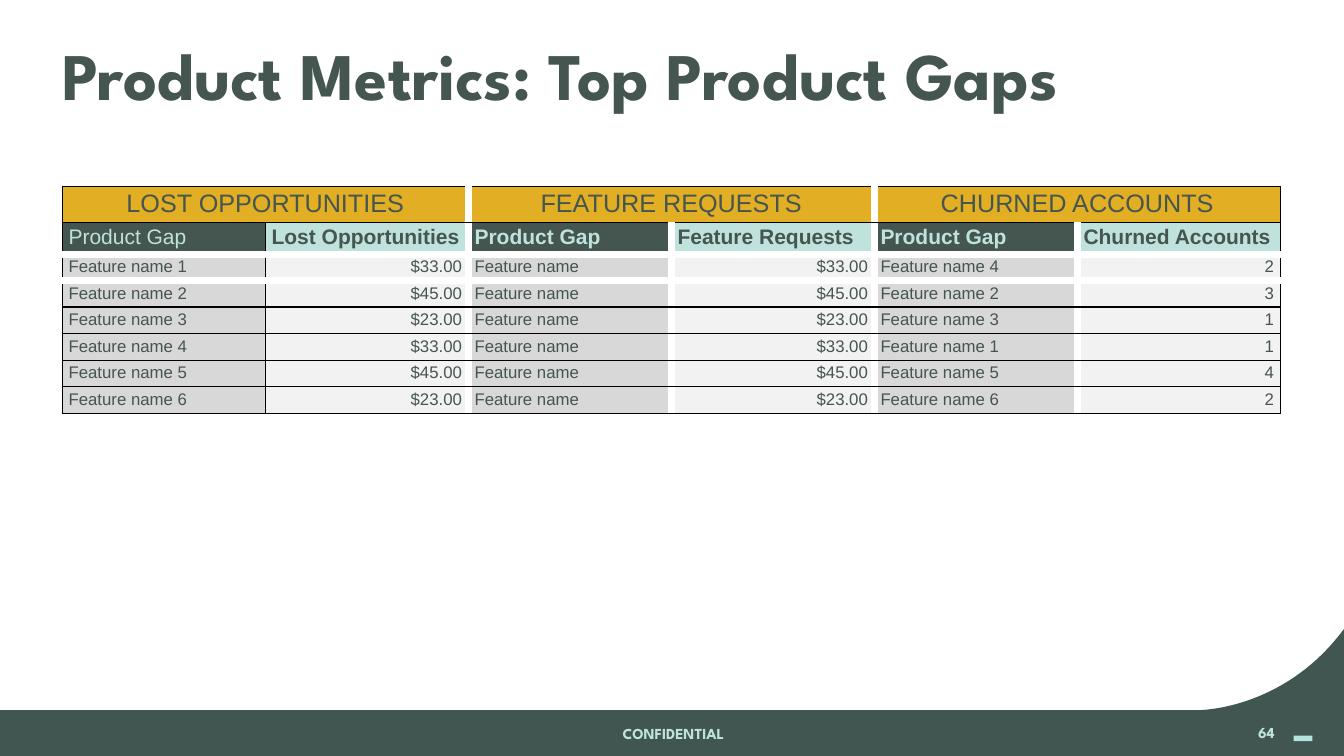
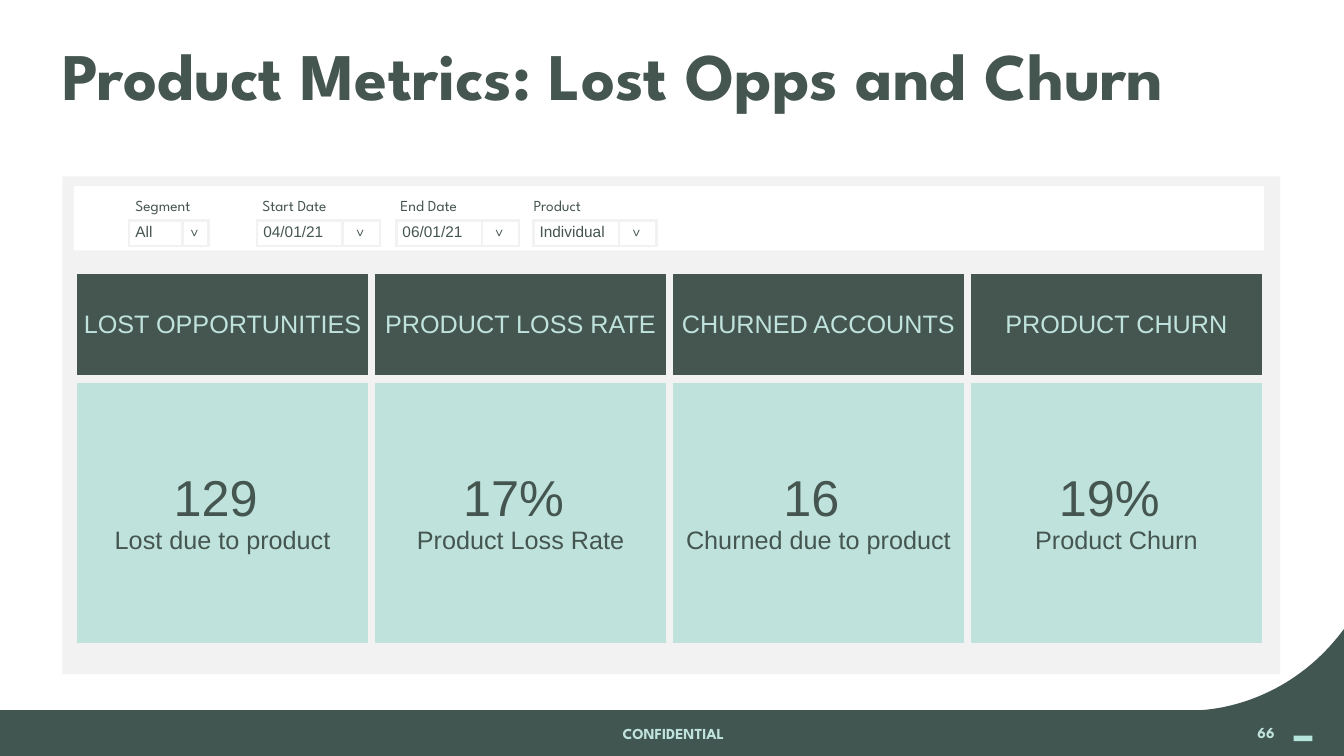
"""Builds two product metrics slides: top product gaps, and lost opportunities with churn."""
from lxml import etree
from pptx import Presentation
from pptx.dml.color import RGBColor
from pptx.enum.shapes import MSO_SHAPE as SHAPE
from pptx.enum.text import MSO_ANCHOR as ANCHOR, PP_ALIGN as ALIGN
from pptx.oxml.ns import qn
from pptx.util import Pt

HEADING_FONT, BODY_FONT = "League Spartan", "Arial"
DARK, MINT, GOLD = "455550", "BFE3DC", "E1AE24"
BAND, MARK = "415651", "B5E5DC"
GREY, PALE, WHITE, BLACK = "D8D8D8", "F2F2F2", "FFFFFF", "000000"
WIDTH, HEIGHT = 960, 540
LEFT, CONTENT_WIDTH = 44.5, 870

GAPS_TITLE, GAPS_PAGE = "Product Metrics: Top Product Gaps", "64"
GAP_GROUPS = [
    ("LOST OPPORTUNITIES", "Lost Opportunities", [
        ("Feature name 1", "$33.00"), ("Feature name 2", "$45.00"),
        ("Feature name 3", "$23.00"), ("Feature name 4", "$33.00"),
        ("Feature name 5", "$45.00"), ("Feature name 6", "$23.00")]),
    ("FEATURE REQUESTS", "Feature Requests", [
        ("Feature name", "$33.00"), ("Feature name", "$45.00"),
        ("Feature name", "$23.00"), ("Feature name", "$33.00"),
        ("Feature name", "$45.00"), ("Feature name", "$23.00")]),
    ("CHURNED ACCOUNTS", "Churned Accounts", [
        ("Feature name 4", "2"), ("Feature name 2", "3"), ("Feature name 3", "1"),
        ("Feature name 1", "1"), ("Feature name 5", "4"), ("Feature name 6", "2")]),
]
GAP_HEADING = "Product Gap"
GAP_ROWS = [26, 22] + [18.9] * 6
THIN, MEDIUM, WIDE = (BLACK, 0.75), (BLACK, 1.5), (WHITE, 6)
ROW_LINES = [THIN, THIN, WIDE, WIDE, MEDIUM, THIN, THIN, THIN, THIN]
COLUMN_LINES = [THIN, THIN, WIDE, WIDE, WIDE, WIDE, THIN]

CHURN_TITLE, CHURN_PAGE = "Product Metrics: Lost Opps and Churn", "66"
METRICS = [
    ("LOST OPPORTUNITIES", "129 ", "Lost due to product"),
    ("PRODUCT LOSS RATE", "17% ", "Product Loss Rate"),
    ("CHURNED ACCOUNTS", "16 ", "Churned due to product"),
    ("PRODUCT CHURN", "19% ", "Product Churn"),
]
FILTERS = [
    ("Segment", 92.2, 57, "All", 92.2, (38.2, 18.7)),
    ("Start Date", 182.9, 63, "04/01/21", 183.6, (61.2, 26.6)),
    ("End Date", 281.5, 59, "06/01/21", 283, (61.2, 26.6)),
    ("Product", 376.6, 51, "Individual", 380.9, (61.2, 26.6)),
]


def rgb(color):
    return RGBColor.from_string(color)


def paint(shape, color):
    shape.shadow.inherit = False
    shape.fill.solid()
    shape.fill.fore_color.rgb = rgb(color)
    shape.line.fill.background()


def add_block(slide, box, color):
    paint(slide.shapes.add_shape(SHAPE.RECTANGLE, *map(Pt, box)), color)


def style(paragraph, size, color, font=BODY_FONT, bold=False, align=ALIGN.LEFT):
    paragraph.alignment = align
    for run in paragraph.runs:
        run.font.size, run.font.name, run.font.bold = Pt(size), font, bold
        run.font.color.rgb = rgb(color)


def set_margins(holder, left=4.5):
    holder.margin_left, holder.margin_right = Pt(left), Pt(4.5)
    holder.margin_top = holder.margin_bottom = Pt(2.25)


def add_label(slide, box, text, size=10.9, color=DARK, bold=False,
              align=ALIGN.LEFT, anchor=ANCHOR.TOP, left_margin=4.5):
    label = slide.shapes.add_textbox(*map(Pt, box))
    frame = label.text_frame
    frame.word_wrap, frame.vertical_anchor = True, anchor
    set_margins(frame, left_margin)
    frame.text = text
    style(frame.paragraphs[0], size, color, HEADING_FONT, bold, align)
    return label


def add_grid(slide, left, top, columns, rows):
    frame = slide.shapes.add_table(len(rows), len(columns), Pt(left), Pt(top),
                                   Pt(sum(columns)), Pt(sum(rows)))
    grid = frame.table
    grid.first_row = grid.horz_banding = False
    for column, width in zip(grid.columns, columns):
        column.width = Pt(width)
    for row, height in zip(grid.rows, rows):
        row.height = Pt(height)
    return grid


def set_cell(cell, fill, lines, text="", anchor=ANCHOR.TOP):
    """Fill one cell; lines are (colour, width) for left, right, top and bottom."""
    properties = cell._tc.get_or_add_tcPr()
    for side, (color, width) in zip("LRTB", lines):
        edge = etree.SubElement(properties, qn(f"a:ln{side}"), w=str(Pt(width)))
        solid = etree.SubElement(edge, qn("a:solidFill"))
        etree.SubElement(solid, qn("a:srgbClr"), val=color)
    cell.fill.solid()
    cell.fill.fore_color.rgb = rgb(fill)
    set_margins(cell)
    cell.vertical_anchor = anchor
    cell.text = text
    return cell.text_frame.paragraphs


def add_band(slide):
    start, bend, end = (855.4, 507.3), (916.6, 508), (WIDTH, 449.3)
    curve = []
    for step in range(1, 41):
        t = step / 40
        weights = (1 - t) ** 3 + 3 * t * (1 - t) ** 2, 3 * t * t * (1 - t), t ** 3
        curve.append(tuple(sum(w * p for w, p in zip(weights, axis))
                           for axis in zip(start, bend, end)))
    outline = [(0, HEIGHT), (0, start[1]), start, *curve]
    builder = slide.shapes.build_freeform(Pt(WIDTH), Pt(HEIGHT))
    builder.add_line_segments([(Pt(x), Pt(y)) for x, y in outline], close=True)
    paint(builder.convert_to_shape(), BAND)


def add_slide(deck, title, page):
    slide = deck.slides.add_slide(deck.slide_layouts[6])
    add_band(slide)
    add_block(slide, (924, 525.5, 13.5, 4), MARK)
    add_label(slide, (LEFT, 36, CONTENT_WIDTH, 41), title, 47.5, bold=True,
              anchor=ANCHOR.MIDDLE, left_margin=0).text_frame.paragraphs[0].line_spacing = 0.9
    add_label(slide, (319, 509.8, 324, 28.8), "CONFIDENTIAL", color=MINT, bold=True,
              align=ALIGN.CENTER, anchor=ANCHOR.MIDDLE)
    add_label(slide, (699, 509, 216, 28.8), page, color=MINT, bold=True,
              align=ALIGN.RIGHT, anchor=ANCHOR.MIDDLE)
    return slide


def add_gaps(slide):
    column_count = 2 * len(GAP_GROUPS)
    grid = add_grid(slide, LEFT, 133, [CONTENT_WIDTH / column_count] * column_count, GAP_ROWS)

    def fill_cell(row, column, text, fill, size, color=DARK, bold=False,
                  align=ALIGN.LEFT, span=1):
        lines = (COLUMN_LINES[column], COLUMN_LINES[column + span],
                 ROW_LINES[row], ROW_LINES[row + 1])
        paragraphs = set_cell(grid.cell(row, column), fill, lines, text)
        style(paragraphs[0], size, color, bold=bold, align=align)

    for group, (heading, measure, features) in enumerate(GAP_GROUPS):
        first, second = 2 * group, 2 * group + 1
        grid.cell(0, first).merge(grid.cell(0, second))
        fill_cell(0, first, heading, GOLD, 18, align=ALIGN.CENTER, span=2)
        fill_cell(1, first, GAP_HEADING, DARK, 15, MINT, bold=group > 0)
        fill_cell(1, second, measure, MINT, 15, bold=True)
        for row, (feature, amount) in enumerate(features, start=2):
            fill_cell(row, first, feature, GREY, 12)
            fill_cell(row, second, amount, PALE, 12, align=ALIGN.RIGHT)


def add_filter(slide, name, name_left, name_width, choice, left, columns):
    add_label(slide, (name_left, 138.2, name_width, 17.3), name)
    picker = add_grid(slide, left, 157.7, columns, [18])
    lines = [(PALE, 2.25)] * 4
    style(set_cell(picker.cell(0, 0), WHITE, lines, choice)[0], 11, DARK)
    blank = set_cell(picker.cell(0, 1), WHITE, lines)[0]
    etree.SubElement(blank._p, qn("a:endParaRPr"), sz="1100")
    arrow_width = 15.1
    arrow_left = left + columns[0] + (columns[1] - arrow_width) / 2
    add_label(slide, (arrow_left, 158.4, arrow_width, 17.3), ">").rotation = 90


def add_metrics(slide):
    grid = add_grid(slide, 52.6, 193, [212.8] * len(METRICS), [77.8, 190.8])
    lines = [(PALE, 6)] * 4
    for column, (heading, figure, caption) in enumerate(METRICS):
        head = set_cell(grid.cell(0, column), DARK, lines, heading, ANCHOR.MIDDLE)
        style(head[0], 18, MINT, align=ALIGN.CENTER)
        body = set_cell(grid.cell(1, column), MINT, lines, f"{figure}\n{caption}", ANCHOR.MIDDLE)
        for paragraph, size in zip(body, (36, 18)):
            style(paragraph, size, DARK, align=ALIGN.CENTER)


def main():
    deck = Presentation()
    deck.slide_width, deck.slide_height = Pt(WIDTH), Pt(HEIGHT)
    add_gaps(add_slide(deck, GAPS_TITLE, GAPS_PAGE))
    churn = add_slide(deck, CHURN_TITLE, CHURN_PAGE)
    add_block(churn, (LEFT, 126, CONTENT_WIDTH, 355.5), PALE)
    add_metrics(churn)
    add_block(churn, (52.8, 133, 850, 45.8), WHITE)
    for entry in FILTERS:
        add_filter(churn, *entry)
    deck.save("out.pptx")


if __name__ == "__main__":
    main()
